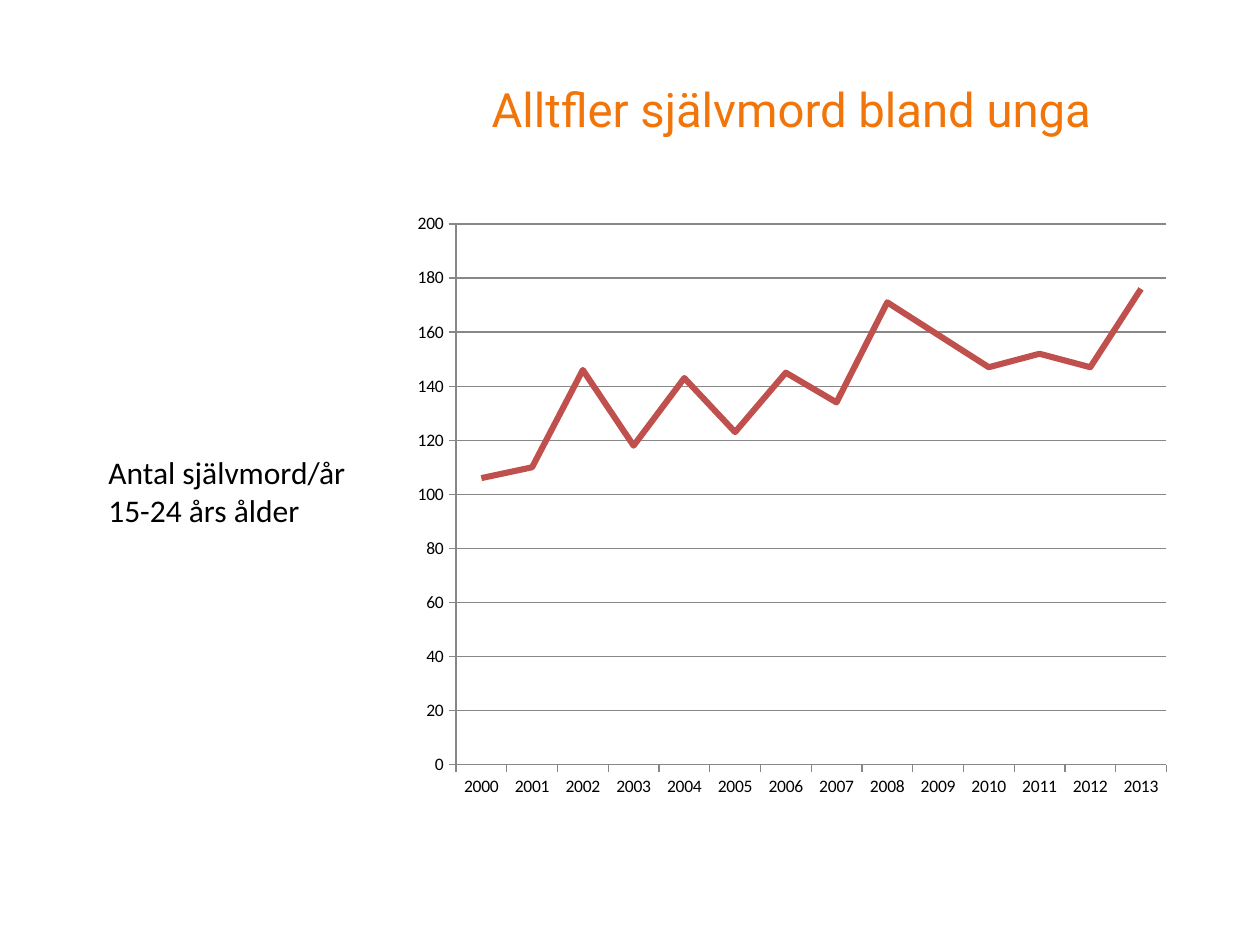
"""Build a slide with a line chart of suicides among young people per year."""
from pptx import Presentation, util as u
from pptx.chart.data import CategoryChartData
from pptx.dml.color import RGBColor
from pptx.enum import chart as ch, text

TITLE = "Alltfler självmord bland unga"
NOTE = ["Antal självmord/år", "15-24 års ålder"]
START = 2000
COUNTS = [106, 110, 146, 118, 143, 123, 145, 134, 171, 159, 147, 152, 147, 176]

ORANGE = RGBColor(0xF1, 0x75, 0x09)
RED = RGBColor(0xC0, 0x50, 0x4D)
GREY = RGBColor(0x87, 0x87, 0x87)
BLACK = RGBColor(0, 0, 0)

PX = u.Inches(1) / 126
SIZE = (1260, 945)
HEAD_BOX = (479, 38, 719, 149)
PLOT_BOX = (402, 202, 780, 607)
NOTE_BOX = (96, 447, 266, 89)


def emu(*vals):
    return [u.Emu(round(v * PX)) for v in vals]


def style(font, name, size, color):
    font.name, font.size = name, u.Pt(size)
    font.color.rgb = color


def add_run(para, words, *look):
    run = para.add_run()
    run.text = words
    style(run.font, *look)


def add_title(slide):
    head = slide.shapes.title
    head.left, head.top, head.width, head.height = emu(*HEAD_BOX)
    frame = head.text_frame
    frame.vertical_anchor = text.MSO_ANCHOR.MIDDLE
    para = frame.paragraphs[0]
    para.alignment = text.PP_ALIGN.LEFT
    para.line_spacing = 0.9
    add_run(para, TITLE, "Roboto", 27, ORANGE)


def add_plot(slide):
    data = CategoryChartData()
    data.categories = [str(START + i) for i in range(len(COUNTS))]
    data.add_series("Series 1", COUNTS)
    plot = slide.shapes.add_chart(ch.XL_CHART_TYPE.LINE, *emu(*PLOT_BOX), data).chart
    style(plot.font, "Calibri", 10, BLACK)
    plot.has_legend = plot.has_title = False
    plot.plots[0].vary_by_categories = False

    line = plot.plots[0].series[0]
    line.smooth = False
    line.marker.style = ch.XL_MARKER_STYLE.NONE
    line.format.line.color.rgb = RED
    line.format.line.width = u.Pt(3.5)

    years, scale = plot.category_axis, plot.value_axis
    scale.minimum_scale, scale.maximum_scale, scale.major_unit = 0, 200, 20
    scale.has_major_gridlines = True
    for axis in (years, scale):
        axis.major_tick_mark = ch.XL_TICK_MARK.OUTSIDE
        axis.minor_tick_mark = ch.XL_TICK_MARK.NONE
    for part in (years, scale, scale.major_gridlines):
        part.format.line.color.rgb = GREY
        part.format.line.width = u.Pt(0.75)


def add_note(slide):
    frame = slide.shapes.add_textbox(*emu(*NOTE_BOX)).text_frame
    frame.word_wrap = False
    frame.auto_size = text.MSO_AUTO_SIZE.SHAPE_TO_FIT_TEXT
    for i, words in enumerate(NOTE):
        para = frame.add_paragraph() if i else frame.paragraphs[0]
        add_run(para, words, "Calibri", 18, BLACK)


def main():
    deck = Presentation()
    deck.slide_width, deck.slide_height = emu(*SIZE)
    slide = deck.slides.add_slide(deck.slide_layouts[5])
    add_title(slide)
    add_plot(slide)
    add_note(slide)
    deck.save("out.pptx")


if __name__ == "__main__":
    main()
